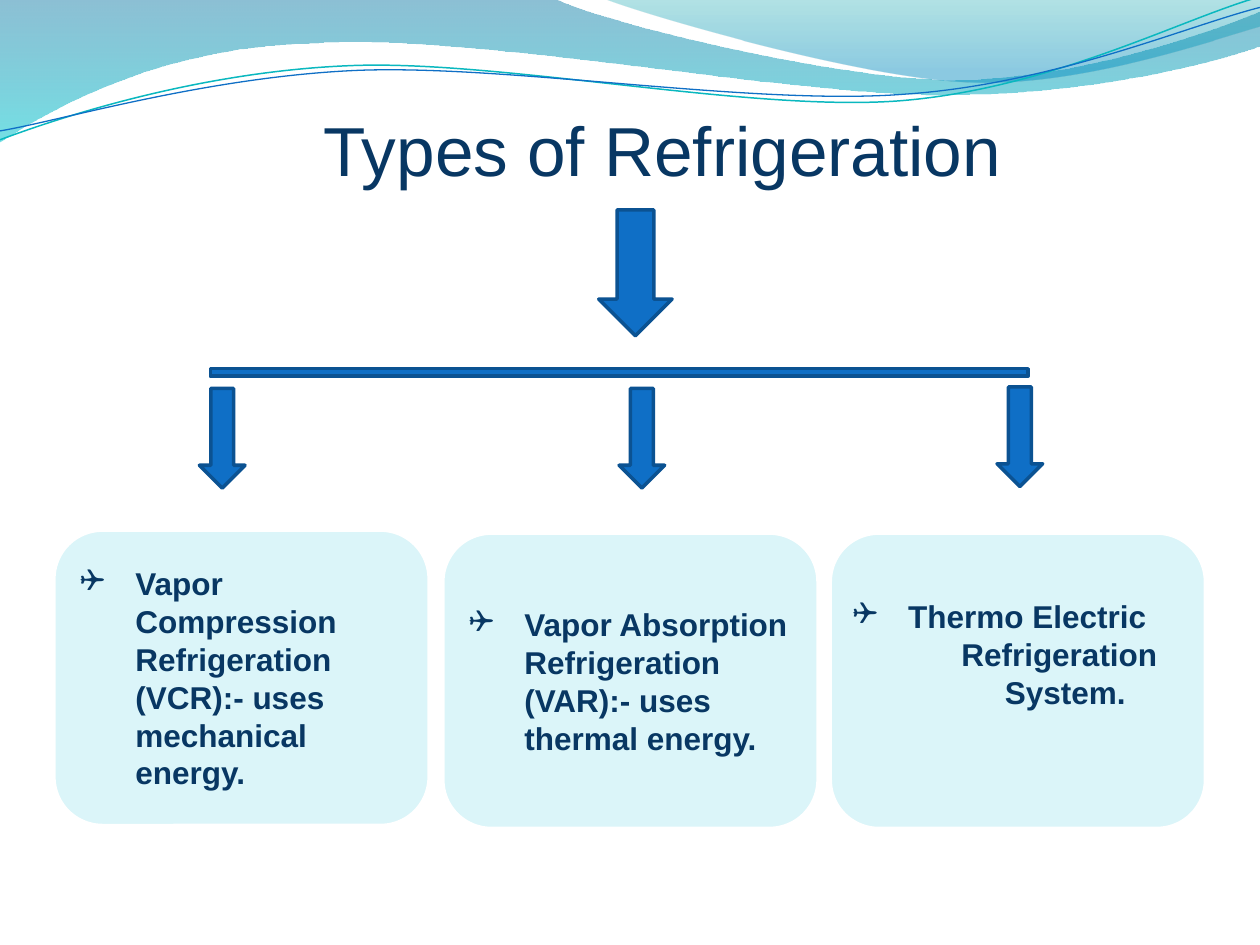
from lxml.etree import SubElement
from pptx import Presentation
from pptx.dml.color import RGBColor
from pptx.enum.shapes import MSO_SHAPE
from pptx.enum.text import MSO_ANCHOR, PP_ALIGN
from pptx.oxml.ns import qn
from pptx.util import Cm, Pt

COLORS = {
    "navy": "083763", "blue": "0F6FC6", "edge": "0B5292", "card": "DBF5F9",
    "white": "FFFFFF", "teal": "0AB8BF", "wave_blue": "0074A1",
    "wave_cyan": "00C6CF", "crest_teal": "00A1A9", "crest_blue": "008BBF",
}
RGB = {name: RGBColor.from_string(value) for name, value in COLORS.items()}

deck = Presentation()
deck.slide_width, deck.slide_height = Cm(25.4), Cm(19.05)
page = deck.slides.add_slide(deck.slide_layouts[5])


def add_curve(start, segments, closed):
    builder = page.shapes.build_freeform(Cm(start[0]), Cm(start[1]))
    points = [(Cm(x), Cm(y)) for segment in segments for x, y in segment]
    builder.add_line_segments(points, close=closed)
    shape = builder.convert_to_shape()
    shape.shadow.inherit = False
    line_nodes = iter(list(shape._element.iter(qn("a:lnTo"))))
    for segment in segments:
        nodes = [next(line_nodes) for point in segment]
        if len(nodes) == 3:
            outline = nodes[0].getparent()
            curve = SubElement(outline, qn("a:cubicBezTo"))
            outline.replace(nodes[0], curve)
            for node in nodes:
                curve.append(node[0])
            for node in nodes[1:]:
                outline.remove(node)
    return shape


def add_block(kind, bounds, fill, edge=None, width=0, lines=()):
    shape = page.shapes.add_shape(kind, *[Cm(value) for value in bounds])
    shape.shadow.inherit = False
    shape.fill.solid()
    shape.fill.fore_color.rgb = RGB[fill]
    if edge:
        shape.line.color.rgb = RGB[edge]
        shape.line.width = Pt(width)
    else:
        shape.line.fill.background()
    if not lines:
        return shape
    frame = shape.text_frame
    frame.word_wrap = True
    frame.text = "\n".join(text for text, extra in lines)
    for number, (para, (text, extra)) in enumerate(zip(frame.paragraphs, lines)):
        para.alignment = PP_ALIGN.LEFT
        font = para.runs[0].font
        font.name, font.size, font.bold = "Arial", Pt(18), True
        font.color.rgb = RGB["navy"]
        properties = para._p.get_or_add_pPr()
        properties.set("marL", str(Cm(1.12 + extra)))
        if number == 0:
            properties.set("indent", str(-Cm(1.12)))
            SubElement(properties, qn("a:buFont")).set("typeface", "Wingdings")
            SubElement(properties, qn("a:buChar")).set("char", "❑")
    return shape


waves = [
    ((0, 0), [
        [(11.18, -0.03)],
        [(12.09, 0.43), (16.87, 1.6), (19.25, 1.6)],
        [(21.67, 1.6), (24.33, 0.66), (25.4, 0.23)],
        [(25.43, 0.91)],
        [(24.97, 1.12), (22.1, 1.93), (18.95, 1.91)],
        [(15.8, 1.91), (9.7, 0.71), (6.53, 0.86)],
        [(3.28, 0.91), (1.17, 2.11), (-0.03, 2.87)],
        [(0, 0)],
    ], [(0, "wave_blue", 45), (1, "wave_cyan", 55)]),
    ((12.17, -0.03), [
        [(12.93, 0.28), (17.32, 1.57), (19.53, 1.65)],
        [(21.74, 1.75), (24.41, 0.81), (25.4, 0.53)],
        [(25.4, 0)],
        [(12.17, -0.03)],
    ], [(0, "crest_teal", 30), (0.8, "crest_blue", 45)]),
]
for start, segments, stops in waves:
    wave = add_curve(start, segments, True)
    wave.line.fill.background()
    wave.fill.gradient()
    wave.fill.gradient_angle = 270
    for stop, (position, color, opacity) in zip(wave.fill.gradient_stops, stops):
        stop.position = position
        stop.color.rgb = RGB[color]
    for node, (position, color, opacity) in zip(wave._element.iter(qn("a:gs")), stops):
        SubElement(node[0], qn("a:alpha")).set("val", str(opacity * 1000))

ripples = [
    ((-0.05, 2.22), [
        [(1.19, 1.82), (4.01, 1.04), (7.05, 1.06)],
        [(10.05, 1.07), (15.02, 2.37), (18.08, 2.29)],
        [(21.13, 2.2), (23.86, 0.91), (25.4, 0.55)],
    ], "teal", 0.85),
    ((-0.04, 2.04), [
        [(1.16, 1.9), (4.17, 1.15), (7.2, 1.16)],
        [(10.25, 1.18), (15.13, 2.25), (18.19, 2.16)],
        [(21.21, 2.1), (23.93, 1.06), (25.45, 0.75)],
    ], "blue", 0.75),
]
for start, segments, color, width in ripples:
    ripple = add_curve(start, segments, False)
    ripple.rotation = 357.3
    ripple.fill.background()
    ripple.line.color.rgb = RGB[color]
    ripple.line.width = Pt(width)

title = page.shapes.title
title.left, title.top, title.width, title.height = Cm(6.15), Cm(2.34), Cm(17.42), Cm(3.48)
frame = title.text_frame
frame.text = "Types of Refrigeration"
frame.word_wrap = True
frame.vertical_anchor = MSO_ANCHOR.BOTTOM
frame.margin_left, frame.margin_bottom = Cm(0.37), Cm(1.99)
frame.margin_right = frame.margin_top = 0
para = frame.paragraphs[0]
para.alignment = PP_ALIGN.LEFT
font = para.runs[0].font
font.name, font.size = "Arial", Pt(39.6)
font.color.rgb = RGB["navy"]

add_block(MSO_SHAPE.DOWN_ARROW, (12.07, 4.23, 1.48, 2.54), "blue", "edge", 2)
add_block(MSO_SHAPE.MATH_MINUS, (1.27, 7.19, 22.43, 0.64), "blue", "edge", 2)
for left, top in [(4.02, 7.83), (12.48, 7.83), (20.1, 7.8)]:
    add_block(MSO_SHAPE.DOWN_ARROW, (left, top, 0.92, 2.01), "blue", "edge", 2)

cards = [
    (1.07, 10.67, [("Vapor Compression Refrigeration (VCR):- uses mechanical energy.", 0)]),
    (16.72, 10.73, []),
    (8.91, 10.73, [("Vapor Absorption Refrigeration (VAR):- uses thermal energy.", 0)]),
]
for left, top, lines in cards:
    add_block(MSO_SHAPE.ROUNDED_RECTANGLE, (left, top, 7.6, 5.99), "card", "white", 3, lines)

thermo_lines = [("Thermo Electric", 0), ("Refrigeration", 1.07), ("System.", 1.95)]
thermo = add_block(MSO_SHAPE.RECTANGLE, (16.94, 11.91, 6.99, 2.57), "card", lines=thermo_lines)
thermo.text_frame.vertical_anchor = MSO_ANCHOR.TOP

deck.save("out.pptx")
